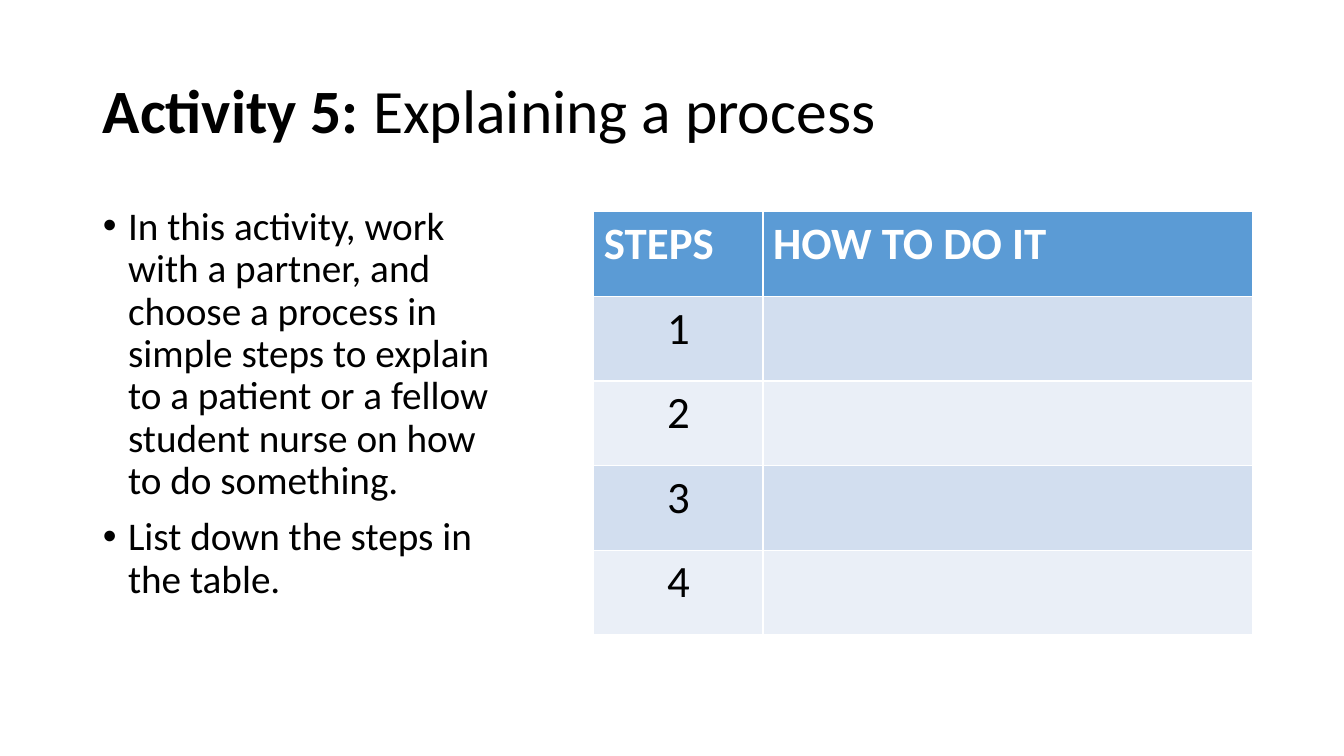
from pptx import Presentation
from pptx.dml.color import RGBColor
from pptx.enum.text import MSO_ANCHOR, MSO_AUTO_SIZE, PP_ALIGN
from pptx.util import Inches, Pt

LEFT = PP_ALIGN.LEFT
CENTER = PP_ALIGN.CENTER
MIDDLE = MSO_ANCHOR.MIDDLE
TOP = MSO_ANCHOR.TOP
NO_AUTOFIT = MSO_AUTO_SIZE.NONE

FONT = "Calibri"
BLACK = "000000"
WHITE = "FFFFFF"
HEADER_FILL = "5B9BD5"
BAND_FILLS = ["D2DEEF", "EAEFF7"]

INSTRUCTIONS = [
    "In this activity, work with a partner, and choose a process in simple steps "
    "to explain to a patient or a fellow student nurse on how to do something.",
    "List down the steps in the table.",
]
STEP_ROWS = [("STEPS", "HOW TO DO IT"), ("1", ""), ("2", ""), ("3", ""), ("4", "")]
COLUMN_SHARES = [0.257, 0.743]


def color(value):
    return RGBColor.from_string(value)


def format_run(run, size, font_color=BLACK, bold=False):
    run.font.name = FONT
    run.font.size = Pt(size)
    run.font.bold = bold
    run.font.color.rgb = color(font_color)


def place(shape, box, anchor):
    shape.left, shape.top, shape.width, shape.height = [Inches(length) for length in box]
    text_frame = shape.text_frame
    text_frame.word_wrap = True
    text_frame.auto_size = NO_AUTOFIT
    text_frame.vertical_anchor = anchor


def add_title(slide, box, label, topic):
    title = slide.shapes.title
    place(title, box, MIDDLE)
    paragraph = title.text_frame.paragraphs[0]
    paragraph.alignment = LEFT
    paragraph.line_spacing = 0.9
    for text, bold in [(label, True), (topic, False)]:
        run = paragraph.add_run()
        run.text = text
        format_run(run, 44, bold=bold)


def add_instructions(slide, box, items):
    body = slide.placeholders[1]
    place(body, box, TOP)
    body.text_frame.text = "\n".join(items)
    for paragraph in body.text_frame.paragraphs:
        paragraph.line_spacing = 0.9
        paragraph.space_before = Pt(10)
        properties = paragraph._p.get_or_add_pPr()
        properties.set("marL", str(Inches(0.25)))
        properties.set("indent", str(Inches(-0.25)))
        format_run(paragraph.runs[0], 28)


def add_steps_table(slide, box, rows):
    left, top, width, height = [Inches(length) for length in box]
    frame = slide.shapes.add_table(len(rows), len(COLUMN_SHARES), left, top, width, height)
    table = frame.table
    for column, share in zip(table.columns, COLUMN_SHARES):
        column.width = int(width * share)
    for row_index, texts in enumerate(rows):
        is_header = row_index == 0
        fill = HEADER_FILL if is_header else BAND_FILLS[(row_index - 1) % 2]
        for column_index, text in enumerate(texts):
            cell = table.cell(row_index, column_index)
            cell.fill.solid()
            cell.fill.fore_color.rgb = color(fill)
            cell.text_frame.text = text
            paragraph = cell.text_frame.paragraphs[0]
            paragraph.alignment = LEFT if is_header else CENTER
            for run in paragraph.runs:
                format_run(run, 32, WHITE if is_header else BLACK, is_header)


def main():
    presentation = Presentation()
    presentation.slide_width = Inches(13.33)
    presentation.slide_height = Inches(7.5)
    slide = presentation.slides.add_slide(presentation.slide_layouts[1])
    add_title(slide, (0.92, 0.4, 11.5, 1.45), "Activity 5: ", "Explaining a process")
    add_instructions(slide, (0.92, 2, 4.31, 4.09), INSTRUCTIONS)
    add_steps_table(slide, (5.89, 2.1, 6.53, 4.2), STEP_ROWS)
    presentation.save("out.pptx")


if __name__ == "__main__":
    main()
